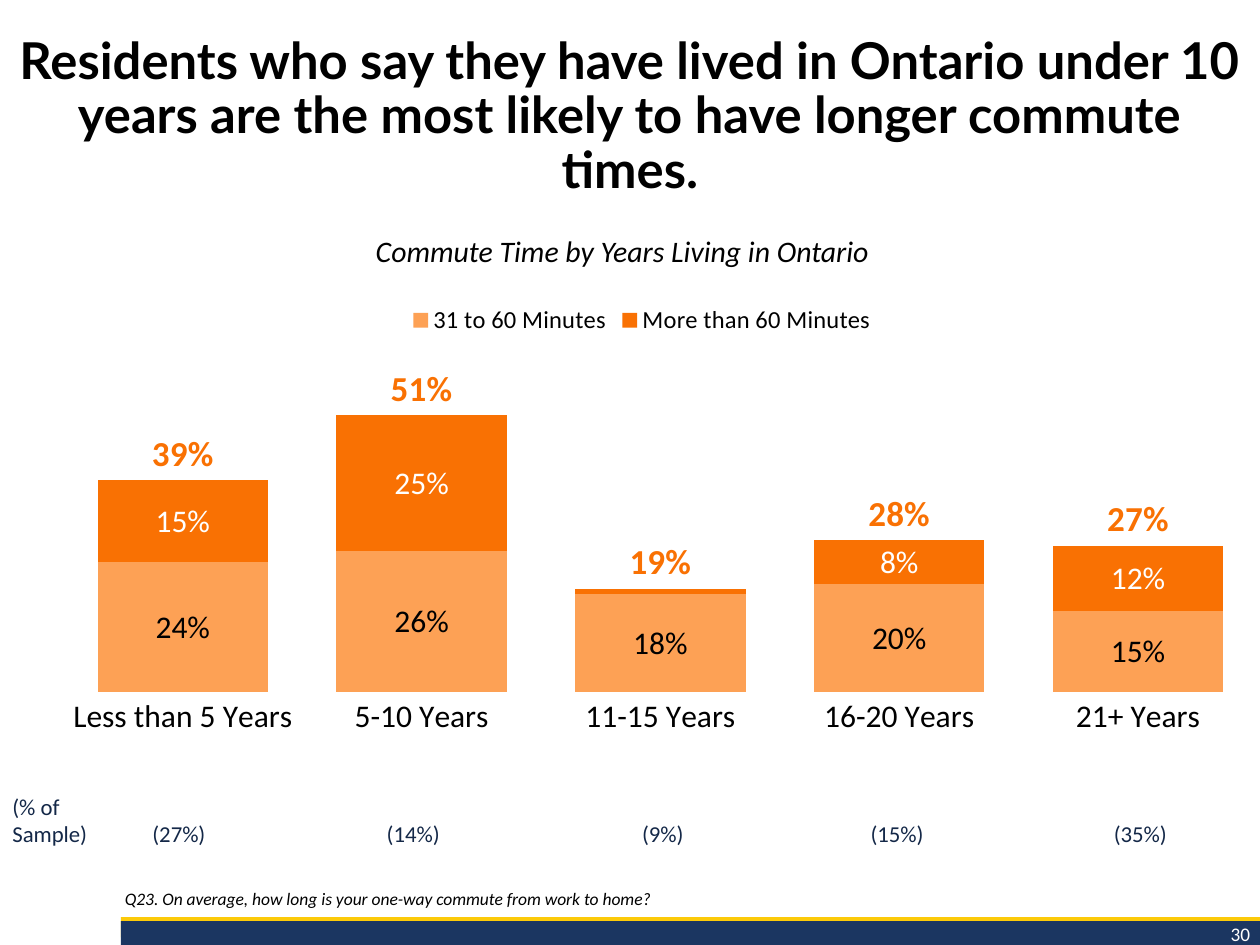
from dataclasses import dataclass

from lxml import etree
from pptx import Presentation
from pptx import util as u
from pptx.chart.data import CategoryChartData
from pptx.dml.color import RGBColor
from pptx.enum import chart as ch, shapes, text
from pptx.oxml import parse_xml
from pptx.oxml.ns import nsdecls, qn

BLACK = RGBColor(0x00, 0x00, 0x00)
WHITE = RGBColor(0xFF, 0xFF, 0xFF)
NAVY = RGBColor(0x1B, 0x36, 0x61)
INK = RGBColor(0x14, 0x28, 0x48)
GOLD = RGBColor(0xFC, 0xCA, 0x09)
PEACH = RGBColor(0xFD, 0xA1, 0x55)
ORANGE = RGBColor(0xF9, 0x71, 0x03)
BODY_FONT, TITLE_FONT = "Calibri", "Lato"
CENTER, LEFT, RIGHT = text.PP_ALIGN.CENTER, text.PP_ALIGN.LEFT, text.PP_ALIGN.RIGHT
WIDTH, HEIGHT = u.Inches(10), u.Inches(7.5)


@dataclass(frozen=True)
class Area:
    left: float
    top: float
    width: float
    height: float

    def box(self) -> tuple:
        return (u.Inches(self.left), u.Inches(self.top),
                u.Inches(self.width), u.Inches(self.height))


@dataclass(frozen=True)
class Commute:
    name: str
    shares: tuple
    fill: RGBColor
    label_color: RGBColor
    label_size: int = 18
    bold: bool = False


@dataclass(frozen=True)
class Sample:
    share: str
    left: float


YEARS = ("Less than 5 Years", "5-10 Years", "11-15 Years", "16-20 Years", "21+ Years")
COMMUTES = (
    Commute("31 to 60 Minutes", (0.24, 0.26, 0.18, 0.2, 0.15), PEACH, BLACK),
    Commute("More than 60 Minutes", (0.15, 0.25, 0.01, 0.08, 0.12), ORANGE, WHITE),
    Commute("Series 3", (0.39, 0.51, 0.19, 0.28, 0.27), WHITE, ORANGE, 20, True),
)
SAMPLES = (Sample("(27%)", 0.9), Sample("(14%)", 2.76), Sample("(9%)", 4.74),
           Sample("(15%)", 6.6), Sample("(35%)", 8.53))
BANDS = ((Area(0.96, 7.28, 9.04, 0.16), GOLD), (Area(0.96, 7.31, 9.04, 0.19), NAVY))
PLOT = {"x": 0.032, "y": 0.143, "w": 0.966, "h": 0.619}


def style_font(font, size: float, color: RGBColor, name: str = BODY_FONT,
               bold: bool = False, italic: bool = False) -> None:
    font.size, font.name, font.bold, font.italic = u.Pt(size), name, bold, italic
    font.color.rgb = color


def write(holder, words: str, *, size: float, color: RGBColor = BLACK,
          name: str = BODY_FONT, bold: bool = False, italic: bool = False,
          align=LEFT, anchor=text.MSO_ANCHOR.TOP, spacing: float = 1.0) -> None:
    frame = holder.text_frame
    frame.word_wrap, frame.auto_size = True, text.MSO_AUTO_SIZE.NONE
    frame.vertical_anchor = anchor
    frame.text = words
    line = frame.paragraphs[0]
    line.alignment, line.line_spacing, line.space_before = align, spacing, u.Pt(0)
    style_font(line.runs[0].font, size, color, name, bold, italic)


def place(holder, area: Area):
    holder.left, holder.top, holder.width, holder.height = area.box()
    return holder


def remove_bullet(holder) -> None:
    layout = holder.text_frame.paragraphs[0]._p.get_or_add_pPr()
    layout.set("marL", "0")
    layout.set("indent", "0")
    etree.SubElement(layout, qn("a:buNone"))


def add_text(slide, area: Area, words: str, **look) -> None:
    write(slide.shapes.add_textbox(*area.box()), words, **look)


def add_band(slide, area: Area, color: RGBColor) -> None:
    band = slide.shapes.add_shape(shapes.MSO_SHAPE.RECTANGLE, *area.box())
    band.shadow.inherit = False
    band.fill.solid()
    band.fill.fore_color.rgb = color
    band.line.fill.background()


def style_series(series, commute: Commute) -> None:
    series.format.fill.solid()
    series.format.fill.fore_color.rgb = commute.fill
    labels = series.data_labels
    labels.show_value = True
    labels.number_format, labels.number_format_is_linked = "0%", False
    style_font(labels.font, commute.label_size, commute.label_color, bold=commute.bold)


def add_commute_chart(slide, area: Area) -> None:
    figures = CategoryChartData(number_format="0%")
    figures.categories = YEARS
    for commute in COMMUTES:
        figures.add_series(commute.name, commute.shares)
    chart = slide.shapes.add_chart(
        ch.XL_CHART_TYPE.COLUMN_STACKED, *area.box(), figures).chart
    style_font(chart.font, 10, INK)
    chart.has_title = False

    bars = chart.plots[0]
    bars.gap_width, bars.overlap, bars.vary_by_categories = 40, 100, False
    for series, commute in zip(bars.series, COMMUTES):
        style_series(series, commute)
    _, longest, total = bars.series
    total.data_labels.position = ch.XL_LABEL_POSITION.INSIDE_BASE
    longest.data_labels._element.insert(0, parse_xml(
        f'<c:dLbl {nsdecls("c")}><c:idx val="2"/><c:delete val="1"/></c:dLbl>'))

    years = chart.category_axis
    years.major_tick_mark = ch.XL_TICK_MARK.NONE
    years.format.line.fill.background()
    style_font(years.tick_labels.font, 18, BLACK)
    scale = chart.value_axis
    scale.minimum_scale, scale.maximum_scale = 0, 0.6
    scale.has_major_gridlines = scale.visible = False

    chart.has_legend = True
    legend = chart.legend
    legend.position, legend.include_in_layout = ch.XL_LEGEND_POSITION.TOP, False
    style_font(legend.font, 14, BLACK)
    legend._element.find(qn("c:legendPos")).addnext(parse_xml(
        f'<c:legendEntry {nsdecls("c")}><c:idx val="2"/><c:delete val="1"/></c:legendEntry>'))

    plot_area = chart._chartSpace.chart.plotArea
    for old in plot_area.findall(qn("c:layout")):
        plot_area.remove(old)
    layout = etree.Element(qn("c:layout"))
    manual = etree.SubElement(layout, qn("c:manualLayout"))
    settings = {"layoutTarget": "inner", "xMode": "edge", "yMode": "edge", **PLOT}
    for tag, value in settings.items():
        etree.SubElement(manual, qn(f"c:{tag}")).set("val", str(value))
    plot_area.insert(0, layout)


def main() -> None:
    deck = Presentation()
    deck.slide_width, deck.slide_height = WIDTH, HEIGHT
    slide = deck.slides.add_slide(deck.slide_layouts[1])

    for area, color in BANDS:
        add_band(slide, area, color)
    add_text(slide, Area(8.54, 7.27, 1.48, 0.29), "30", size=11, color=WHITE, align=RIGHT)

    write(place(slide.shapes.title, Area(0, 0.23, 10, 1.22)),
          "Residents who say they have lived in Ontario under 10 years "
          "are the most likely to have longer commute times.",
          size=29, name=TITLE_FONT, bold=True, align=CENTER, spacing=0.9)

    question = place(slide.placeholders[1], Area(0.89, 6.73, 9.09, 0.54))
    write(question, "Q23. On average, how long is your one-way commute from work to home?",
          size=10, italic=True, anchor=text.MSO_ANCHOR.BOTTOM, spacing=0.9)
    remove_bullet(question)

    add_commute_chart(slide, Area(0.19, 2.31, 9.81, 4.18))
    add_text(slide, Area(0, 1.8, 9.88, 0.39), "Commute Time by Years Living in Ontario",
             size=17, italic=True, align=CENTER)
    add_text(slide, Area(0, 6.24, 1.04, 0.54), "(% of Sample)", size=13, color=INK)
    for sample in SAMPLES:
        add_text(slide, Area(sample.left, 6.46, 1.04, 0.32), sample.share,
                 size=13, color=INK, align=CENTER)
    deck.save("out.pptx")


if __name__ == "__main__":
    main()
